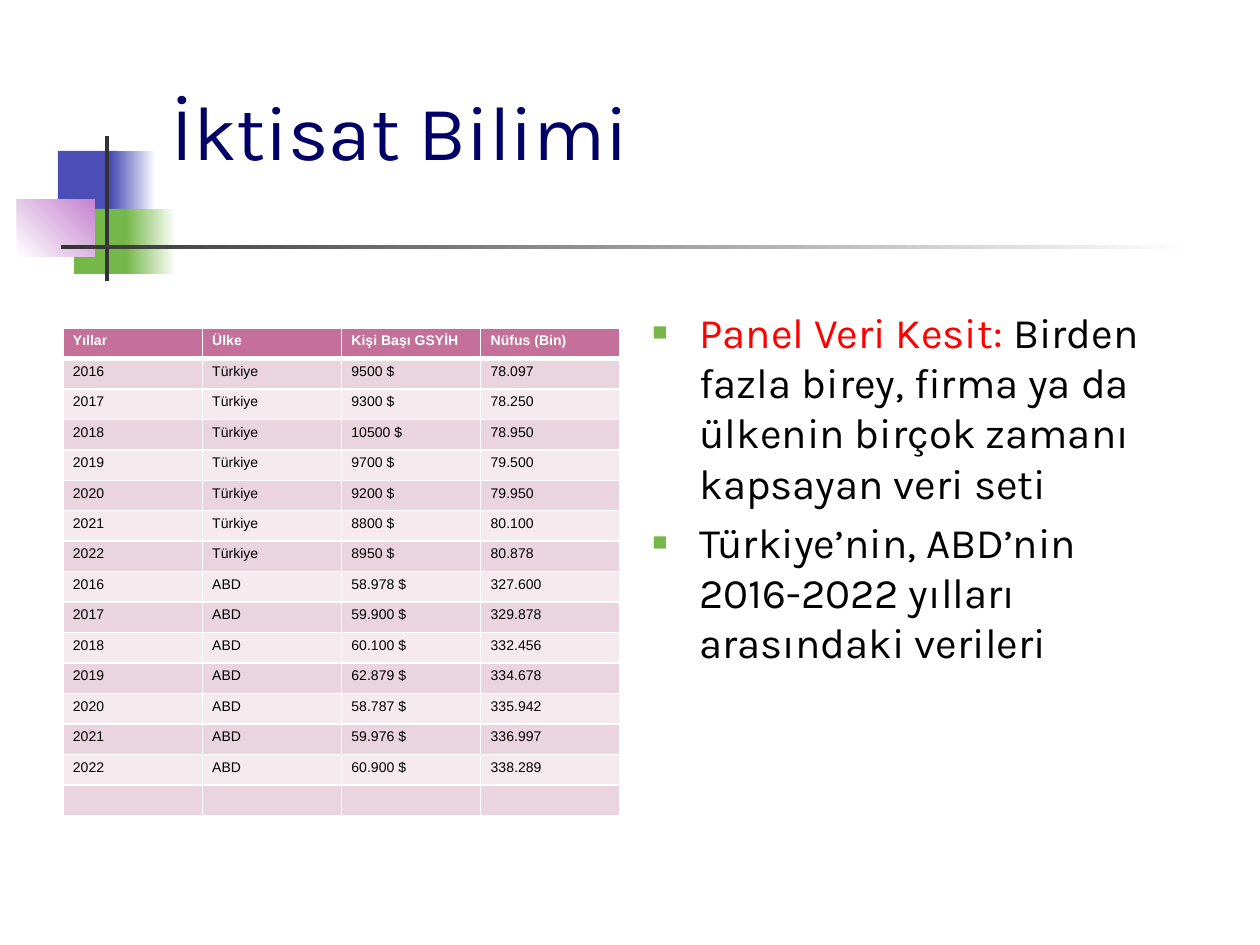
from lxml import etree
from pptx import Presentation, util as u
from pptx.dml.color import RGBColor
from pptx.enum import shapes, text
from pptx.oxml import ns

HUES = {
    "navy": "000066", "blue": "4B4EB5", "green": "76B749", "pink": "C481CF",
    "dark": "333333", "white": "FFFFFF", "black": "000000", "red": "FF0000",
    "head": "C4709A", "odd": "EAD5DE", "even": "F5EBEF",
}
SCALE = u.Inches(1) / 126

HEAD = ["Yıllar", "Ülke", "Kişi Başı GSYİH", "Nüfus (Bin)"]
DATA = {
    "Türkiye": [
        ("9500 $", "78.097"), ("9300 $", "78.250"), ("10500 $", "78.950"),
        ("9700 $", "79.500"), ("9200 $", "79.950"), ("8800 $", "80.100"),
        ("8950 $", "80.878"),
    ],
    "ABD": [
        ("58.978 $", "327.600"), ("59.900 $", "329.878"),
        ("60.100 $", "332.456"), ("62.879 $", "334.678"),
        ("58.787 $", "335.942"), ("59.976 $", "336.997"),
        ("60.900 $", "338.289"),
    ],
}
BLOCKS = [
    ((58, 151, 60, 65), "blue", None, 0),
    ((111, 151, 45, 65), "blue", "white", 0),
    ((74, 209, 58, 65), "green", None, 0),
    ((126, 209, 50, 65), "green", "white", 0),
    ((17, 199, 78, 58), "white", "pink", 45),
    ((105, 136, 4, 145), "dark", None, 0),
    ((61, 245, 1134, 4), "dark", "white", 0),
]
NOTES = [
    [("Panel Veri Kesit: ", "red"),
     ("Birden fazla birey, firma ya da ülkenin birçok zamanı "
      "kapsayan veri seti", "black")],
    [("Türkiye’nin, ABD’nin 2016-2022 yılları arasındaki verileri", "black")],
]


def px(val):
    return u.Emu(round(val * SCALE))


def rgb(hue):
    return RGBColor.from_string(HUES[hue])


def add(root, tag, **attrs):
    return etree.SubElement(root, ns.qn(tag), **attrs)


class Deck:
    def __init__(self):
        self.prs = Presentation()
        self.prs.slide_width = px(1260)
        self.prs.slide_height = px(945)
        self.slide = self.prs.slides.add_slide(self.prs.slide_layouts[5])
        self.face = "Karla"
        self.grid = "Arial"

    def font(self, para, face, size, hue, bold=False):
        para.font.name = face
        para.font.size = u.Pt(size)
        para.font.bold = bold
        para.font.color.rgb = rgb(hue)

    def title(self, box, words):
        shape = self.slide.shapes.title
        shape.left, shape.top, shape.width, shape.height = map(px, box)
        frame = shape.text_frame
        frame.text = words
        frame.auto_size = text.MSO_AUTO_SIZE.NONE
        frame.vertical_anchor = text.MSO_ANCHOR.MIDDLE
        para = frame.paragraphs[0]
        para.alignment = text.PP_ALIGN.LEFT
        self.font(para, self.face, 44, "navy")

    def block(self, box, hue, end, angle):
        shape = self.slide.shapes.add_shape(
            shapes.MSO_SHAPE.RECTANGLE, *map(px, box))
        shape.shadow.inherit = False
        shape.line.fill.background()
        if end is None:
            shape.fill.solid()
            shape.fill.fore_color.rgb = rgb(hue)
            return
        shape.fill.gradient()
        shape.fill.gradient_angle = angle
        for stop, tone in zip(shape.fill.gradient_stops, (hue, end)):
            stop.color.rgb = rgb(tone)

    def bullet(self, para):
        props = para._p.get_or_add_pPr()
        props.set("marL", str(px(47)))
        props.set("indent", str(px(-47)))
        add(add(props, "a:buClr"), "a:srgbClr", val=HUES["green"])
        add(props, "a:buSzPct", val="60000")
        add(props, "a:buFont", typeface=self.grid)
        add(props, "a:buChar", char="■")

    def notes(self, box, items):
        frame = self.slide.shapes.add_textbox(*map(px, box)).text_frame
        frame.word_wrap = True
        for num, item in enumerate(items):
            para = frame.add_paragraph() if num else frame.paragraphs[0]
            self.bullet(para)
            para.space_before = u.Pt(4.8)
            self.font(para, self.face, 24, "black")
            for words, hue in item:
                run = para.add_run()
                run.text = words
                run.font.color.rgb = rgb(hue)

    def edge(self, cell, thick):
        props = cell._tc.get_or_add_tcPr()
        for side in "LRTB":
            width = u.Pt(thick if side == "B" else 1)
            line = add(props, f"a:ln{side}", w=str(width))
            add(add(line, "a:solidFill"), "a:srgbClr", val=HUES["white"])

    def table(self, box, rows):
        table = self.slide.shapes.add_table(
            len(rows), len(rows[0]), *map(px, box)).table
        for row, items in enumerate(rows):
            hue = "head" if row == 0 else "odd" if row % 2 else "even"
            for col, words in enumerate(items):
                cell = table.cell(row, col)
                cell.text = words
                cell.margin_left = cell.margin_right = px(10)
                cell.margin_top = cell.margin_bottom = px(5)
                self.edge(cell, 1 if row else 3)
                cell.fill.solid()
                cell.fill.fore_color.rgb = rgb(hue)
                self.font(cell.text_frame.paragraphs[0], self.grid, 8,
                          "black" if row else "white", row == 0)


def main():
    deck = Deck()
    for block in BLOCKS:
        deck.block(*block)
    deck.notes((640, 300, 557, 544), NOTES)
    body = [[str(year), land, *pair] for land, pairs in DATA.items()
            for year, pair in enumerate(pairs, 2016)]
    deck.table((63, 328, 557, 488), [HEAD, *body, [""] * len(HEAD)])
    deck.title((159, 29, 1074, 202), "İktisat Bilimi")
    deck.prs.save("out.pptx")


if __name__ == "__main__":
    main()
